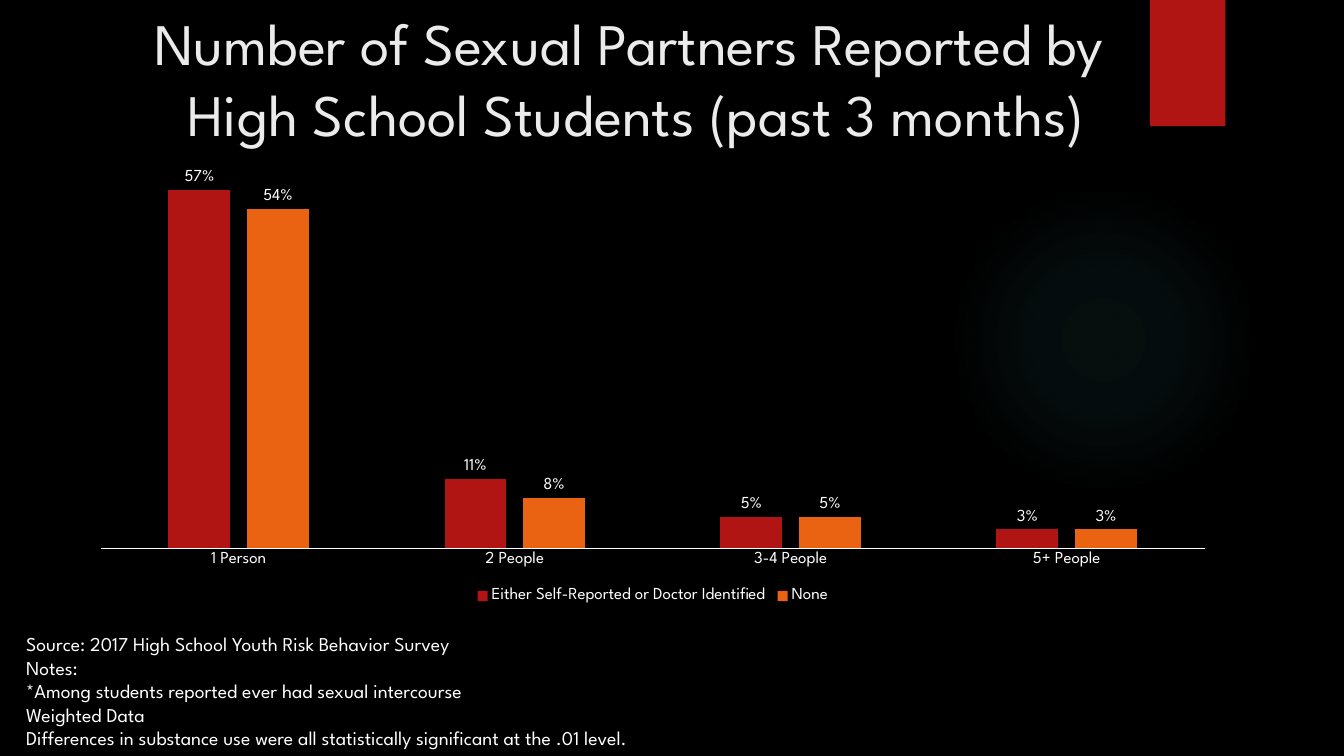
"""Build a slide charting sexual partners reported by high school students."""
import pptx
import pptx.chart.data
import pptx.dml.color
import pptx.enum.chart
import pptx.enum.shapes
import pptx.enum.text
import pptx.oxml
import pptx.oxml.ns
import pptx.util

Cm, Pt = pptx.util.Cm, pptx.util.Pt
RGBColor = pptx.dml.color.RGBColor

HEADING = "Number of Sexual Partners Reported by \vHigh School Students (past 3 months)"
PARTNERS = ["1 Person", "2 People", "3-4 People", "5+ People"]
BLACK = RGBColor(0x00, 0x00, 0x00)
WHITE = RGBColor(0xFF, 0xFF, 0xFF)
PALE = RGBColor(0xEB, 0xEB, 0xEB)
RED = RGBColor(0xB0, 0x15, 0x13)
ORANGE = RGBColor(0xEA, 0x63, 0x12)
GLOW = RGBColor(0x50, 0xB9, 0xC1)
GLOW_STOPS = [(0, 7), (36, 6), (69, 0)]
GROUPS = [
    ("Either Self-Reported or Doctor Identified", [0.57, 0.11, 0.05, 0.03], RED),
    ("None", [0.54, 0.08, 0.05, 0.03], ORANGE),
]
NOTES = [
    "Source: 2017 High School Youth Risk Behavior Survey",
    "Notes:",
    "*Among students reported ever had sexual intercourse",
    "Weighted Data",
    "Differences in substance use were all statistically significant at the .01 level.",
]
FONT = "League Spartan"


def style(font, size=12, color=WHITE):
    """Apply the slide's typeface with a size and colour."""
    font.name, font.size, font.color.rgb = FONT, Pt(size), color


def write(frame, lines, size, color, align, anchor):
    """Fill a text frame with formatted paragraphs."""
    frame.word_wrap = True
    frame.vertical_anchor = anchor
    for index, line in enumerate(lines):
        paragraph = frame.add_paragraph() if index else frame.paragraphs[0]
        paragraph.text = line
        paragraph.alignment = align
        for run in paragraph.runs:
            style(run.font, size, color)


def decorate(slide, kind, box):
    """Add a plain red shape without outline or shadow."""
    shape = slide.shapes.add_shape(kind, *map(Cm, box))
    shape.shadow.inherit = False
    shape.fill.solid()
    shape.fill.fore_color.rgb = RED
    shape.line.fill.background()
    return shape


def make_glow(shape):
    """Replace the solid fill with a fading circular gradient."""
    stops = "".join(
        f'<a:gs pos="{place * 1000}"><a:srgbClr val="{GLOW}">'
        f'<a:alpha val="{opacity * 1000}"/></a:srgbClr></a:gs>'
        for place, opacity in GLOW_STOPS
    )
    gradient = pptx.oxml.parse_xml(
        f'<a:gradFill {pptx.oxml.ns.nsdecls("a")}><a:gsLst>{stops}</a:gsLst>'
        '<a:path path="circle"><a:fillToRect l="50000" t="50000" r="50000" b="50000"/>'
        "</a:path></a:gradFill>"
    )
    properties = shape._element.spPr
    properties.replace(properties.find(pptx.oxml.ns.qn("a:solidFill")), gradient)


def add_partner_chart(slide):
    """Add the clustered columns comparing both groups."""
    data = pptx.chart.data.CategoryChartData(number_format="0%")
    data.categories = PARTNERS
    for name, shares, _ in GROUPS:
        data.add_series(name, shares)
    chart = slide.shapes.add_chart(
        pptx.enum.chart.XL_CHART_TYPE.COLUMN_CLUSTERED,
        Cm(1.96), Cm(4.09), Cm(28.98), Cm(11.23), data,
    ).chart
    style(chart.font, 10)
    chart.has_title = False
    chart.has_legend = True
    chart.legend.position = pptx.enum.chart.XL_LEGEND_POSITION.BOTTOM
    chart.legend.include_in_layout = False
    style(chart.legend.font)

    people = chart.category_axis
    people.major_tick_mark = pptx.enum.chart.XL_TICK_MARK.NONE
    people.format.line.color.rgb = WHITE
    people.format.line.width = Pt(0.75)
    style(people.tick_labels.font)
    share = chart.value_axis
    share.minimum_scale, share.maximum_scale = 0, 0.6
    share.has_major_gridlines = False
    share.visible = False

    plot = chart.plots[0]
    plot.gap_width, plot.overlap = 219, -27
    plot.vary_by_categories = False
    for columns, (_, _, color) in zip(plot.series, GROUPS):
        columns.format.fill.solid()
        columns.format.fill.fore_color.rgb = color
        labels = columns.data_labels
        labels.show_value = True
        labels.number_format, labels.number_format_is_linked = "0%", False
        labels.position = pptx.enum.chart.XL_LABEL_POSITION.OUTSIDE_END
        style(labels.font)


def main():
    """Assemble and save the slide."""
    deck = pptx.Presentation()
    deck.slide_width, deck.slide_height = Cm(33.87), Cm(19.05)
    slide = deck.slides.add_slide(deck.slide_layouts[5])
    slide.background.fill.solid()
    slide.background.fill.fore_color.rgb = BLACK

    shapes = pptx.enum.shapes.MSO_SHAPE
    make_glow(decorate(slide, shapes.OVAL, (23.9, 4.65, 7.82, 7.82)))
    decorate(slide, shapes.RECTANGLE, (28.98, 0, 1.9, 3.18))

    align, anchor = pptx.enum.text.PP_ALIGN, pptx.enum.text.MSO_ANCHOR
    heading = slide.shapes.title
    heading.left, heading.top, heading.width, heading.height = map(Cm, (0.86, 0, 30.35, 3.89))
    write(heading.text_frame, [HEADING], size=42, color=PALE,
          align=align.CENTER, anchor=anchor.MIDDLE)
    heading.text_frame.auto_size = pptx.enum.text.MSO_AUTO_SIZE.NONE

    add_partner_chart(slide)
    notes = slide.shapes.add_textbox(Cm(0.41), Cm(15.8), Cm(33.46), Cm(3.25)).text_frame
    write(notes, NOTES, size=14, color=WHITE, align=align.LEFT, anchor=anchor.TOP)
    notes.auto_size = pptx.enum.text.MSO_AUTO_SIZE.SHAPE_TO_FIT_TEXT
    deck.save("out.pptx")


if __name__ == "__main__":
    main()
